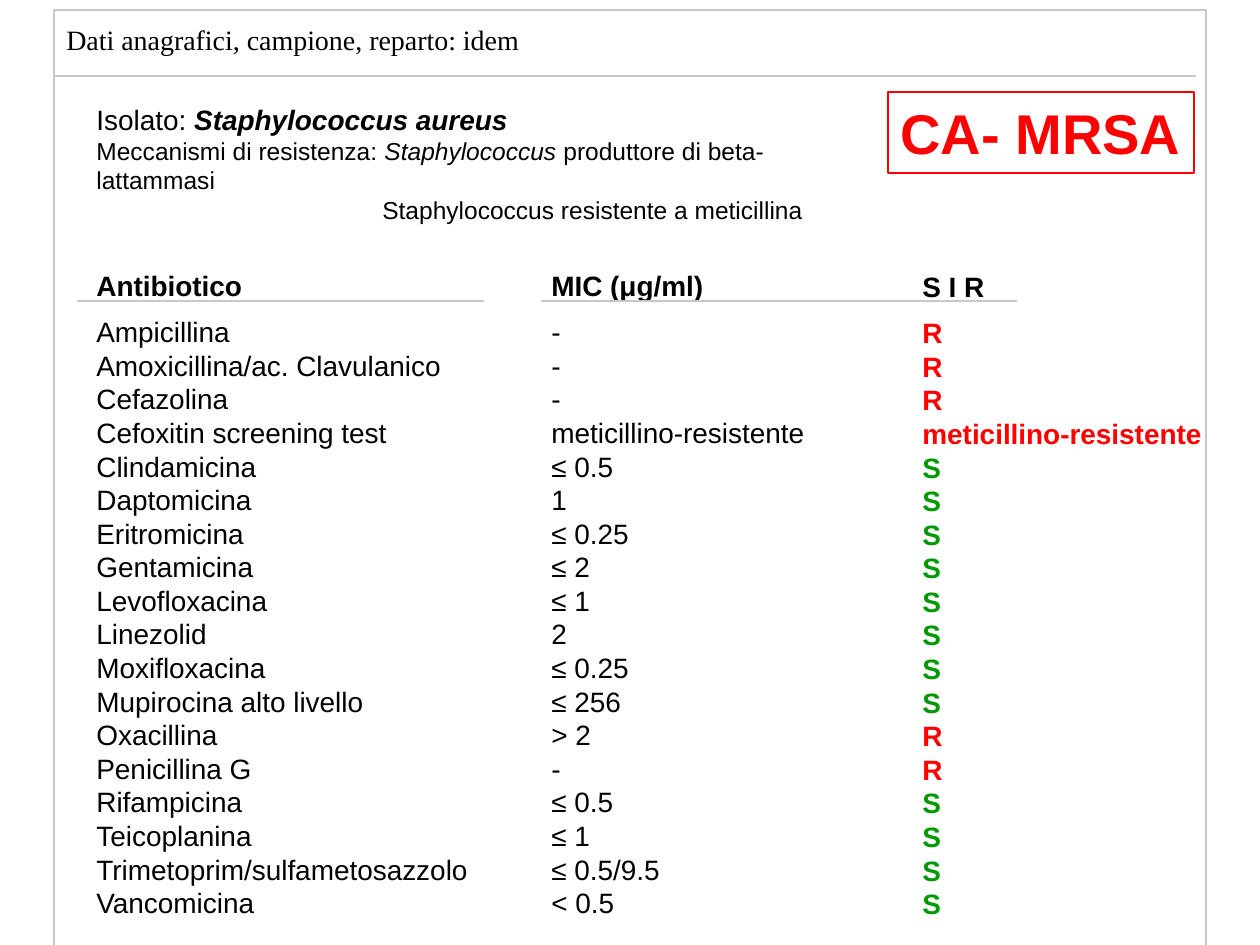
from dataclasses import dataclass
from typing import NamedTuple

from lxml import etree
from pptx import Presentation
from pptx.dml.color import RGBColor
from pptx.enum.shapes import MSO_CONNECTOR, MSO_SHAPE
from pptx.enum.text import MSO_ANCHOR, PP_ALIGN
from pptx.oxml.ns import qn
from pptx.shapes.base import BaseShape
from pptx.slide import Slide
from pptx.text.text import TextFrame
from pptx.util import Emu, Pt

STRAIGHT = MSO_CONNECTOR.STRAIGHT
RECTANGLE = MSO_SHAPE.RECTANGLE
LEFT = PP_ALIGN.LEFT
TOP = MSO_ANCHOR.TOP
EMU_PER_PX = 914400 / 126


@dataclass(frozen=True)
class Theme:
    ink: RGBColor = RGBColor(0, 0, 0)
    rule: RGBColor = RGBColor(0xC7, 0xC9, 0xC7)
    resistant: RGBColor = RGBColor(0xFF, 0, 0)
    sensitive: RGBColor = RGBColor(0, 0x99, 0)
    sans: str = "Arial"
    serif: str = "Times New Roman"
    body: int = 16
    detail: int = 14
    badge: int = 32
    line_width: float = 0.75
    leading: float = 1.2
    header_gap: float = 7.4


THEME = Theme()


class Box(NamedTuple):
    left: int
    top: int
    width: int
    height: int


class Rule(NamedTuple):
    start: int
    end: int
    y: int


class Run(NamedTuple):
    text: str
    bold: bool = False
    italic: bool = False


@dataclass(frozen=True)
class Line:
    runs: tuple[Run, ...]
    size: int = THEME.body
    color: RGBColor = THEME.ink
    font: str = THEME.sans
    before: float = 0
    indent: int = 0


class Result(NamedTuple):
    antibiotic: str
    mic: str
    sir: str


@dataclass(frozen=True)
class Column:
    heading: str
    field: str
    box: Box


RULES = (Rule(54, 1196, 76), Rule(77, 484, 301), Rule(541, 1017, 301))

COLUMNS = (
    Column("Antibiotico", "antibiotic", Box(84, 262, 410, 667)),
    Column("MIC (μg/ml)", "mic", Box(539, 262, 290, 667)),
    Column("S I R", "sir", Box(910, 263, 310, 667)),
)

RESULTS = (
    Result("Ampicillina", "-", "R"),
    Result("Amoxicillina/ac. Clavulanico", "-", "R"),
    Result("Cefazolina", "-", "R"),
    Result("Cefoxitin screening test", "meticillino-resistente", "meticillino-resistente"),
    Result("Clindamicina", "≤ 0.5", "S"),
    Result("Daptomicina", "1", "S"),
    Result("Eritromicina", "≤ 0.25", "S"),
    Result("Gentamicina", "≤ 2", "S"),
    Result("Levofloxacina", "≤ 1", "S"),
    Result("Linezolid", "2", "S"),
    Result("Moxifloxacina", "≤ 0.25", "S"),
    Result("Mupirocina alto livello", "≤ 256", "S"),
    Result("Oxacillina", "> 2", "R"),
    Result("Penicillina G", "-", "R"),
    Result("Rifampicina", "≤ 0.5", "S"),
    Result("Teicoplanina", "≤ 1", "S"),
    Result("Trimetoprim/sulfametosazzolo", "≤ 0.5/9.5", "S"),
    Result("Vancomicina", "< 0.5", "S"),
)

ISOLATE = (
    Line((Run("Isolato: "), Run("Staphylococcus aureus", True, True))),
    Line(
        (
            Run("Meccanismi di resistenza:"),
            Run(" Staphylococcus ", italic=True),
            Run("produttore di beta-lattammasi"),
        ),
        size=THEME.detail,
    ),
    Line((Run("Staphylococcus resistente a meticillina"),), size=THEME.detail, indent=286),
)


def px(length: int) -> Emu:
    return Emu(round(length * EMU_PER_PX))


def write_lines(frame: TextFrame, lines: tuple[Line, ...], wrap: bool = True) -> None:
    frame.word_wrap = wrap
    frame.vertical_anchor = TOP
    for index, line in enumerate(lines):
        paragraph = frame.paragraphs[0] if index == 0 else frame.add_paragraph()
        paragraph.alignment = LEFT
        paragraph.line_spacing = Pt(line.size * THEME.leading)
        if line.before:
            paragraph.space_before = Pt(line.before)
        if line.indent:
            paragraph._p.get_or_add_pPr().set("marL", str(px(line.indent)))
        paragraph.font.size = Pt(line.size)
        paragraph.font.name = line.font
        paragraph.font.color.rgb = line.color
        uniform = len({run[1:] for run in line.runs}) == 1
        if uniform:
            paragraph.font.bold, paragraph.font.italic = line.runs[0][1:]
        for part in line.runs:
            run = paragraph.add_run()
            run.text = part.text
            if not uniform:
                run.font.bold, run.font.italic = part.bold, part.italic


def add_text(slide: Slide, box: Box, lines: tuple[Line, ...]) -> None:
    write_lines(slide.shapes.add_textbox(*map(px, box)).text_frame, lines)


def add_outline(slide: Slide, box: Box, color: RGBColor) -> BaseShape:
    outline = slide.shapes.add_shape(RECTANGLE, *map(px, box))
    outline.shadow.inherit = False
    outline.fill.background()
    outline.line.color.rgb = color
    outline.line.width = Pt(THEME.line_width)
    return outline


def add_rule(slide: Slide, rule: Rule) -> None:
    ends = (rule.start, rule.y, rule.end, rule.y)
    connector = slide.shapes.add_connector(STRAIGHT, *map(px, ends))
    connector.line.color.rgb = THEME.rule
    connector.line.width = Pt(THEME.line_width)
    etree.SubElement(connector._element.spPr, qn("a:effectLst"))


def add_column(slide: Slide, column: Column) -> None:
    graded = column.field == "sir"
    lines = [Line((Run(column.heading, True),))]
    for index, result in enumerate(RESULTS):
        verdict = THEME.sensitive if result.sir == "S" else THEME.resistant
        lines.append(
            Line(
                (Run(getattr(result, column.field), graded),),
                color=verdict if graded else THEME.ink,
                before=0 if index else THEME.header_gap,
            )
        )
    add_text(slide, column.box, tuple(lines))


def main() -> None:
    """Build the antibiogram slide and save it."""
    deck = Presentation()
    deck.slide_width, deck.slide_height = px(1260), px(945)
    slide = deck.slides.add_slide(deck.slide_layouts[6])
    patient = Line((Run("Dati anagrafici, campione, reparto: idem"),), font=THEME.serif)
    add_text(slide, Box(54, 16, 1144, 47), (patient,))
    add_outline(slide, Box(54, 10, 1152, 939), THEME.rule)
    add_text(slide, Box(84, 96, 800, 105), ISOLATE)
    for column in COLUMNS:
        add_column(slide, column)
    for rule in RULES:
        add_rule(slide, rule)
    strain = add_outline(slide, Box(888, 92, 306, 81), THEME.resistant)
    label = Line((Run("CA- MRSA", True),), size=THEME.badge, color=THEME.resistant)
    write_lines(strain.text_frame, (label,), wrap=False)
    deck.save("out.pptx")


if __name__ == "__main__":
    main()
